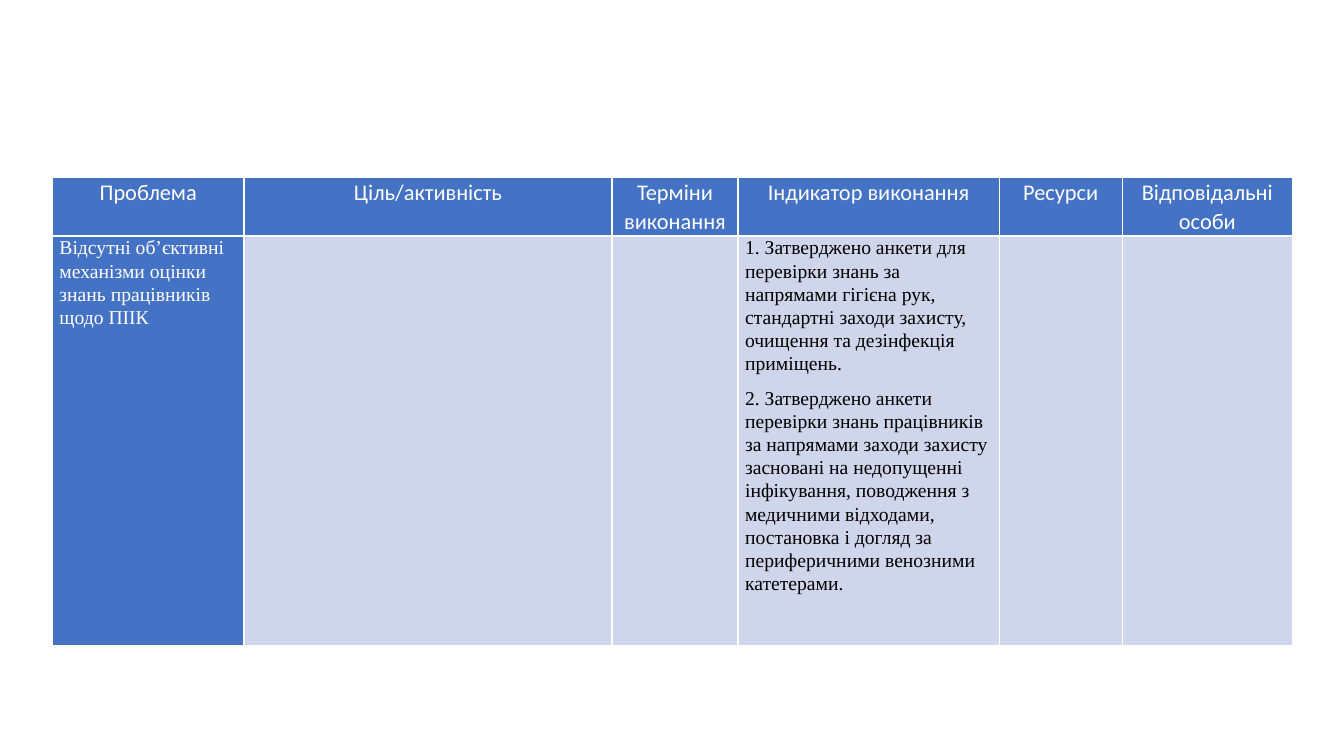
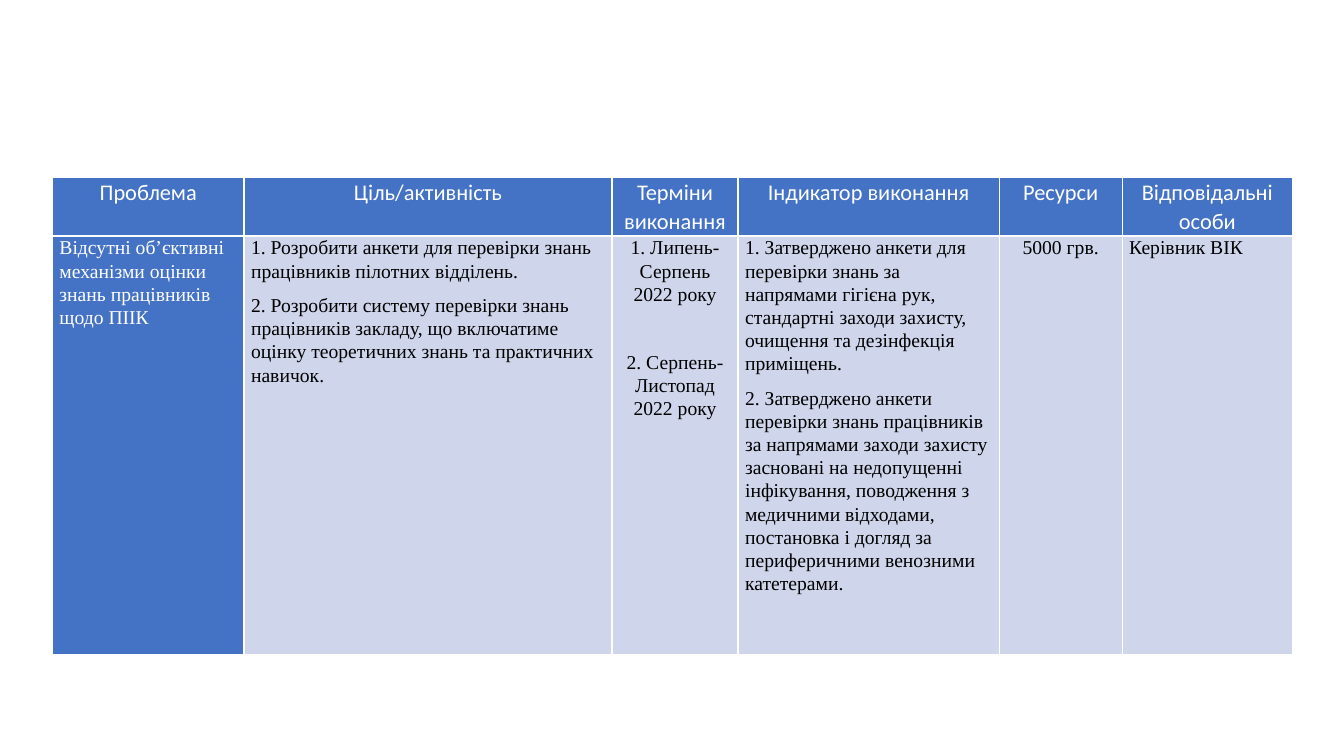
from dataclasses import dataclass

from lxml import etree
from pptx import Presentation
from pptx.dml.color import RGBColor
from pptx.enum.text import PP_ALIGN
from pptx.oxml.ns import qn
from pptx.util import Inches, Pt

LEFT, CENTER, JUSTIFY = PP_ALIGN.LEFT, PP_ALIGN.CENTER, PP_ALIGN.JUSTIFY

# Shared look
BLUE, PALE_BLUE, WHITE, BLACK = "4472C4", "CFD5EA", "FFFFFF", "000000"
TABLE_LEFT, TABLE_TOP = 0.52, 1.76
COLUMN_WIDTHS = (1.9, 3.65, 1.25, 2.59, 1.22, 1.69)
HEADER_HEIGHT = 0.56
BORDER_WIDTH = 1


@dataclass(frozen=True)
class TextStyle:
    font: str
    size: int
    color: str
    fill: str


@dataclass(frozen=True)
class CellText:
    paragraphs: tuple[str, ...] = ()
    alignment: PP_ALIGN = LEFT
    space_after: int = 8


@dataclass(frozen=True)
class PlanSlide:
    body_height: float
    cells: tuple[CellText, ...]


HEADER_STYLE = TextStyle("Calibri", 16, WHITE, BLUE)
PROBLEM_STYLE = TextStyle("Times New Roman", 14, WHITE, BLUE)
BODY_STYLE = TextStyle("Times New Roman", 14, BLACK, PALE_BLUE)

# Content
HEADERS = (
    "Проблема",
    "Ціль/активність",
    "Терміни виконання",
    "Індикатор виконання",
    "Ресурси",
    "Відповідальні особи",
)
EMPTY = CellText()
PROBLEM = CellText(("Відсутні об’єктивні механізми оцінки знань працівників щодо ПІІК",))
ACTIVITIES = CellText((
    "1. Розробити анкети для перевірки знань працівників пілотних відділень.",
    "2. Розробити систему перевірки знань працівників закладу, що включатиме "
    "оцінку теоретичних знань та практичних навичок.",
))
DEADLINES = CellText(
    ("1. Липень-Серпень 2022 року", "2. Серпень-Листопад 2022 року"), CENTER, 32
)
INDICATORS = CellText((
    "1. Затверджено анкети для перевірки знань за напрямами гігієна рук, "
    "стандартні заходи захисту, очищення та дезінфекція приміщень.",
    "2. Затверджено анкети перевірки знань працівників за напрямами заходи "
    "захисту засновані на недопущенні інфікування, поводження з медичними "
    "відходами, постановка і догляд за периферичними венозними катетерами.",
))
RESOURCES = CellText(("5000 грв.",), CENTER)
RESPONSIBLE = CellText(("Керівник ВІК",), JUSTIFY)

PLAN_SLIDES = (
    PlanSlide(4.06, (PROBLEM, EMPTY, EMPTY, INDICATORS, EMPTY, EMPTY)),
    PlanSlide(4.15, (PROBLEM, ACTIVITIES, DEADLINES, INDICATORS, RESOURCES, RESPONSIBLE)),
)


def rgb(color: str) -> RGBColor:
    return RGBColor.from_string(color)


def add_borders(cell) -> None:
    """Draw a white line on all four sides; call before filling the cell."""
    properties = cell._tc.get_or_add_tcPr()
    for side in ("lnL", "lnR", "lnT", "lnB"):
        line = etree.SubElement(properties, qn(f"a:{side}"), w=str(Pt(BORDER_WIDTH)))
        fill = etree.SubElement(line, qn("a:solidFill"))
        etree.SubElement(fill, qn("a:srgbClr"), val=WHITE)


def fill_cell(cell, text: CellText, style: TextStyle) -> None:
    add_borders(cell)
    cell.fill.solid()
    cell.fill.fore_color.rgb = rgb(style.fill)
    cell.margin_left = cell.margin_right = Inches(0.07)
    cell.margin_top = cell.margin_bottom = 0
    frame = cell.text_frame
    for index, wording in enumerate(text.paragraphs):
        paragraph = frame.add_paragraph() if index else frame.paragraphs[0]
        paragraph.alignment = text.alignment
        paragraph.line_spacing = 1.07
        paragraph.space_after = Pt(text.space_after)
        run = paragraph.add_run()
        run.text = wording
        run.font.name = style.font
        run.font.size = Pt(style.size)
        run.font.color.rgb = rgb(style.color)


def add_plan_slide(presentation, plan: PlanSlide) -> None:
    slide = presentation.slides.add_slide(presentation.slide_layouts[6])
    table = slide.shapes.add_table(
        2, len(HEADERS),
        Inches(TABLE_LEFT), Inches(TABLE_TOP),
        Inches(sum(COLUMN_WIDTHS)), Inches(HEADER_HEIGHT + plan.body_height),
    ).table
    table.first_row = table.horz_banding = False
    table.rows[0].height = Inches(HEADER_HEIGHT)
    table.rows[1].height = Inches(plan.body_height)
    for index, (width, header, text) in enumerate(zip(COLUMN_WIDTHS, HEADERS, plan.cells)):
        table.columns[index].width = Inches(width)
        fill_cell(table.cell(0, index), CellText((header,), CENTER), HEADER_STYLE)
        fill_cell(table.cell(1, index), text, BODY_STYLE if index else PROBLEM_STYLE)


def main() -> None:
    presentation = Presentation()
    presentation.slide_width = Inches(13.33)
    presentation.slide_height = Inches(7.5)
    for plan in PLAN_SLIDES:
        add_plan_slide(presentation, plan)
    presentation.save("out.pptx")


if __name__ == "__main__":
    main()
